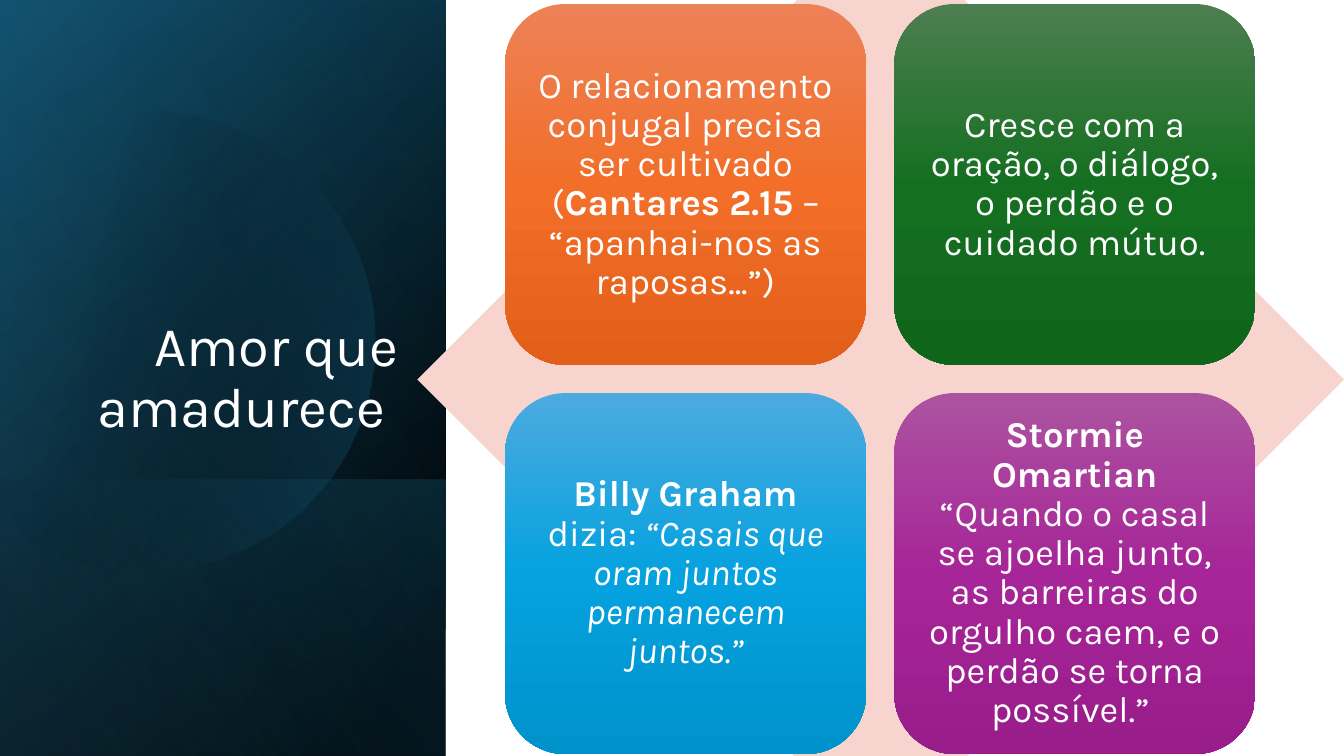
from lxml import etree
from pptx import Presentation
from pptx import util as u
from pptx.dml.color import RGBColor
from pptx.enum import shapes, text
from pptx.oxml import ns

PX = 9144  # EMU per px, 100 px to the inch
COLORS = {
    "white": "FFFFFF", "black": "000000", "teal": "156082", "deep_teal": "104862",
    "sky": "46B1E1", "blush": "F7D5CE",
    "orange": ("ED8257", "F26E29", "E25F1A"),
    "green": ("4D7E50", "156F21", "0F661B"),
    "blue": ("4CAADF", "05A2DF", "0092CB"),
    "purple": ("AC53A0", "A62598", "991C8B"),
}


def write(tf, runs, size=26, font="Karla", color="white", align="CENTER",
          anchor="MIDDLE", margin=11):
    """Fill a text frame with one paragraph of (words, style) runs; style is "", "b" or "i"."""
    tf.word_wrap = True
    tf.auto_size = text.MSO_AUTO_SIZE.NONE
    tf.vertical_anchor = text.MSO_ANCHOR[anchor]
    tf.margin_left = tf.margin_right = tf.margin_top = tf.margin_bottom = margin * PX
    p = tf.paragraphs[0]
    p.alignment = text.PP_ALIGN[align]
    p.line_spacing = 0.9
    for words, style in runs:
        r = p.add_run()
        r.text = words
        r.font.name, r.font.size = font, u.Pt(size)
        r.font.bold, r.font.italic = "b" in style, "i" in style
        r.font.color.rgb = RGBColor.from_string(COLORS[color])


def bezier(start, c1, c2, end, steps=24):
    """Points along a cubic curve, without its start."""
    for k in range(1, steps + 1):
        t = k / steps
        yield tuple(round((1 - t) ** 3 * a + 3 * t * (1 - t) ** 2 * b
                          + 3 * t * t * (1 - t) * c + t ** 3 * d, 2)
                    for a, b, c, d in zip(start, c1, c2, end))


class Deck:
    def __init__(self, width, height):
        self.prs = Presentation()
        self.prs.slide_width, self.prs.slide_height = width * PX, height * PX
        self.s = self.prs.slides.add_slide(self.prs.slide_layouts[6])

    def plain(self, sp):
        sp.shadow.inherit = False
        sp.line.fill.background()
        return sp

    def gradient(self, sp, stops, angle):
        """Fill with (position %, hex, opacity %) stops; angle runs clockwise."""
        sp.fill.background()
        grad = etree.Element(ns.qn("a:gradFill"), rotWithShape="1")
        stop_list = etree.SubElement(grad, ns.qn("a:gsLst"))
        for position, color, opacity in stops:
            gs = etree.SubElement(stop_list, ns.qn("a:gs"), pos=str(position * 1000))
            rgb = etree.SubElement(gs, ns.qn("a:srgbClr"), val=color)
            if opacity < 100:
                etree.SubElement(rgb, ns.qn("a:alpha"), val=str(opacity * 1000))
        etree.SubElement(grad, ns.qn("a:lin"), ang=str(angle * 60000), scaled="0")
        sp_pr = sp._element.spPr
        sp_pr.replace(sp_pr.find(ns.qn("a:noFill")), grad)

    def shape(self, kind, x, y, w, h):
        return self.plain(self.s.shapes.add_shape(
            shapes.MSO_SHAPE[kind], x * PX, y * PX, w * PX, h * PX))

    def panel(self, x, y, w, h, stops, angle):
        """A rectangle turned a quarter and mirrored, with its gradient."""
        sp = self.shape("RECTANGLE", x, y, w, h)
        sp.rotation = 90
        sp._element.spPr.find(ns.qn("a:xfrm")).set("flipH", "1")
        self.gradient(sp, [(at, COLORS[c], opacity) for at, c, opacity in stops], angle)

    def outline(self, points, stops, angle):
        builder = self.s.shapes.build_freeform(*points[0], scale=PX)
        builder.add_line_segments(points[1:], close=True)
        sp = self.plain(builder.convert_to_shape())
        self.gradient(sp, [(at, COLORS[c], opacity) for at, c, opacity in stops], angle)

    def diamond(self, x, y, side, color):
        sp = self.shape("DIAMOND", x, y, side, side)
        sp.fill.solid()
        sp.fill.fore_color.rgb = RGBColor.from_string(COLORS[color])

    def card(self, x, y, side, color, runs):
        sp = self.shape("ROUNDED_RECTANGLE", x, y, side, side)
        self.gradient(sp, [(at, c, 100) for at, c in zip((0, 50, 100), COLORS[color])], 90)
        write(sp.text_frame, runs)

    def label(self, x, y, w, h, runs, **style):
        box = self.s.shapes.add_textbox(x * PX, y * PX, w * PX, h * PX)
        write(box.text_frame, runs, **style)


CARDS = [
    ("orange", [("O relacionamento conjugal precisa ser cultivado (", ""),
                ("Cantares 2.15", "b"), (" – “apanhai-nos as raposas...”)", "")]),
    ("green", [("Cresce com a oração, o diálogo, o perdão e o cuidado mútuo.", "")]),
    ("blue", [("Billy Graham", "b"), (" dizia: ", ""),
              ("“Casais que oram juntos permanecem juntos.”", "i")]),
    ("purple", [("Stormie Omartian ", "b"),
                ("“Quando o casal se ajoelha junto, as barreiras do orgulho caem, "
                 "e o perdão se torna possível.” ", "")]),
]
DISC_START = (149, 110)
DISC_CURVES = [
    ((246, 112), (335, 177), (363, 275)),
    ((398, 397), (328, 523), (207, 558)),
    ((131, 580), (53, 561), (-3, 514)),
]
DISC_EDGE = [(-15, 503), (-15, 175), (0, 161)]
DISC_TOP = [((23, 142), (50, 128), (80, 119)), ((103, 113), (126, 110), DISC_START)]


def disc_points():
    points = [DISC_START]
    for curve in DISC_CURVES:
        points.extend(bezier(points[-1], *curve))
    points.extend(DISC_EDGE)
    for curve in DISC_TOP:
        points.extend(bezier(points[-1], *curve))
    return points


def main():
    deck = Deck(1333, 750)
    side_panel = (-154, 154, 750, 442)
    deck.panel(*side_panel, [(8, "black", 100), (100, "deep_teal", 100)], 50)
    deck.panel(*side_panel, [(0, "black", 0), (99, "teal", 46)], 30)
    deck.panel(84, 392, 274, 442, [(2, "teal", 29), (100, "black", 30)], 130)
    deck.outline(disc_points(), [(29, "black", 0), (100, "teal", 43)], 14)
    deck.panel(*side_panel, [(0, "black", 0), (99, "sky", 11)], 120)
    deck.label(64, 184, 341, 262, [("Amor que amadurece ", "")],
               size=40, align="RIGHT", anchor="BOTTOM", margin=10)

    deck.diamond(414, -83, 919, "blush")
    side, pitch = 358, 386
    for i, (color, runs) in enumerate(CARDS):
        row, col = divmod(i, 2)
        deck.card(501 + col * pitch, 4 + row * pitch, side, color, runs)
    deck.prs.save("out.pptx")


if __name__ == "__main__":
    main()
